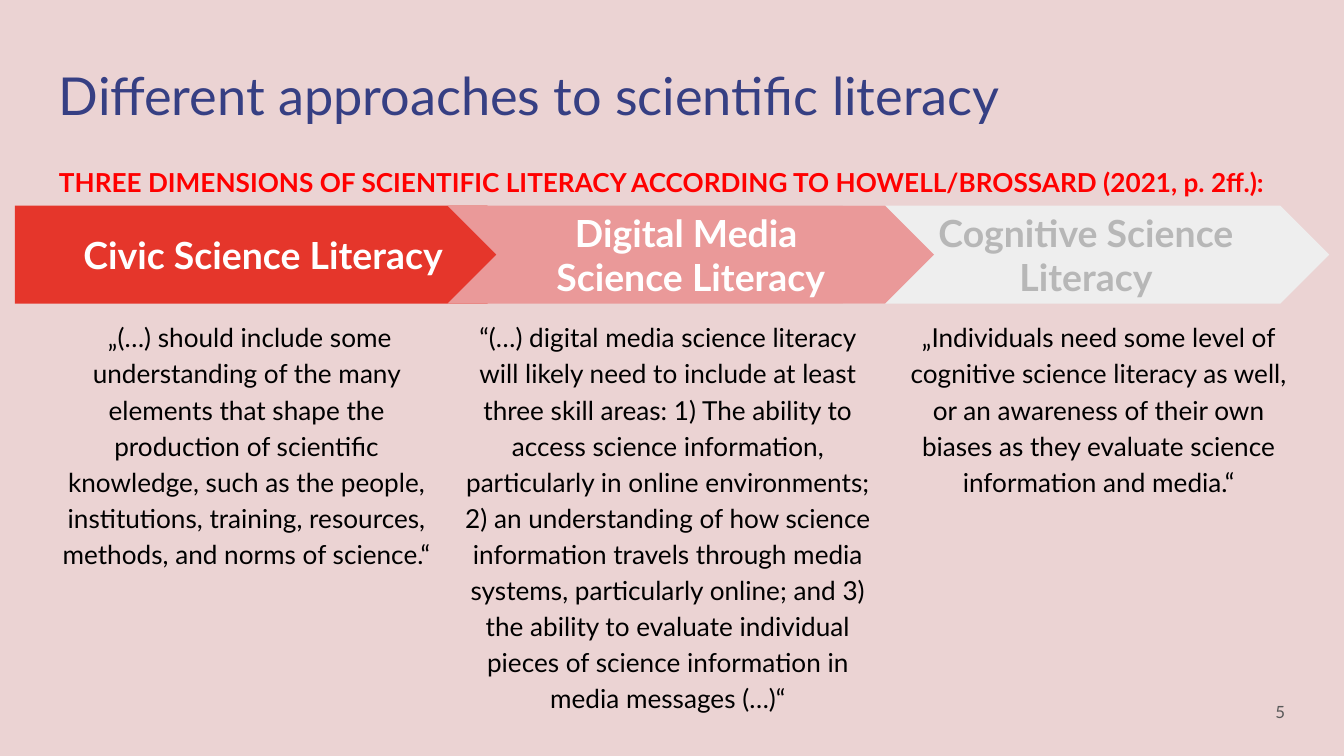
from pptx import Presentation
from pptx.dml.color import RGBColor
from pptx.enum import shapes, text
from pptx.util import Inches, Pt

TITLE = "Different approaches to scientific literacy"
SUBTITLE = "THREE DIMENSIONS OF SCIENTIFIC LITERACY ACCORDING TO HOWELL/BROSSARD (2021, p. 2ff.):"
PAGE = "5"
CHEVRON = shapes.MSO_SHAPE.CHEVRON
PENTAGON = shapes.MSO_SHAPE.PENTAGON

DIMENSIONS = [
    dict(name="Cognitive Science Literacy", kind=CHEVRON, arrow=(6.27, 3.62),
         fill="EEEEEE", color="B7B7B7", body=(6.6, 3.15),
         quote="„Individuals need some level of cognitive science literacy as well, or an "
               "awareness of their own biases as they evaluate science information and media.“"),
    dict(name="Civic Science Literacy", kind=PENTAGON, arrow=(0.11, 3.88),
         fill="E5362B", color="FFFFFF", body=(0.34, 2.99),
         quote=" „(…) should include some understanding of the many elements that shape the "
               "production of scientific knowledge, such as the people, institutions, training, "
               "resources, methods, and norms of science.“"),
    dict(name="Digital Media \nScience Literacy", kind=CHEVRON, arrow=(3.33, 3.62),
         fill="EA9999", color="FFFFFF", body=(3.33, 3.28),
         quote="“(…) digital media science literacy will likely need to include at least three "
               "skill areas: 1) The ability to access science information, particularly in online "
               "environments; 2) an understanding of how science information travels through media "
               "systems, particularly online; and 3) the ability to evaluate individual pieces of "
               "science information in media messages (…)“"),
]
ARROW_TOP, ARROW_HEIGHT, BODY_HEIGHT = 1.53, 0.73, 3.08


def rgb(value):
    return RGBColor.from_string(value)


def write(sp, content, size=14, color="000000", bold=False, align="LEFT",
          anchor="TOP", spacing=1.0):
    tf = sp.text_frame
    tf.word_wrap = True
    tf.vertical_anchor = getattr(text.MSO_ANCHOR, anchor)
    tf.margin_left = tf.margin_right = tf.margin_top = tf.margin_bottom = Inches(0.1)
    p = tf.paragraphs[0]
    p.text = content
    p.alignment = getattr(text.PP_ALIGN, align)
    p.line_spacing = spacing
    for r in p.runs:
        r.font.name = "Lato"
        r.font.size = Pt(size)
        r.font.bold = bold
        r.font.color.rgb = rgb(color)


def add_text(s, box, content, **fmt):
    write(s.shapes.add_textbox(*map(Inches, box)), content, **fmt)


def add_arrow(s, kind, box, fill, content, **fmt):
    sp = s.shapes.add_shape(kind, *map(Inches, box))
    sp.shadow.inherit = False
    sp.adjustments[0] = 0.5
    sp.fill.solid()
    sp.fill.fore_color.rgb = rgb(fill)
    sp.line.fill.background()
    write(sp, content, **fmt)


prs = Presentation()
prs.slide_width = Inches(10)
prs.slide_height = prs.slide_width * 9 // 16
s = prs.slides.add_slide(prs.slide_layouts[6])
s.background.fill.solid()
s.background.fill.fore_color.rgb = rgb("EBD3D3")

add_text(s, (0.34, 0.37, 7.44, 0.63), TITLE, size=28, color="363F83")
add_text(s, (0.34, 1.1, 9.32, 0.43), SUBTITLE, color="FF0000", bold=True, spacing=1.15)
add_text(s, (9.06, 5.08, 0.6, 0.43), PAGE, size=9, color="595959", align="RIGHT", anchor="MIDDLE")

for d in DIMENSIONS:
    left, width = d["arrow"]
    add_arrow(s, d["kind"], (left, ARROW_TOP, width, ARROW_HEIGHT), d["fill"], d["name"],
              size=20, color=d["color"], bold=True, align="CENTER", anchor="MIDDLE")
    left, width = d["body"]
    add_text(s, (left, ARROW_TOP + ARROW_HEIGHT, width, BODY_HEIGHT), d["quote"],
             align="CENTER", spacing=1.15)

prs.save("out.pptx")
